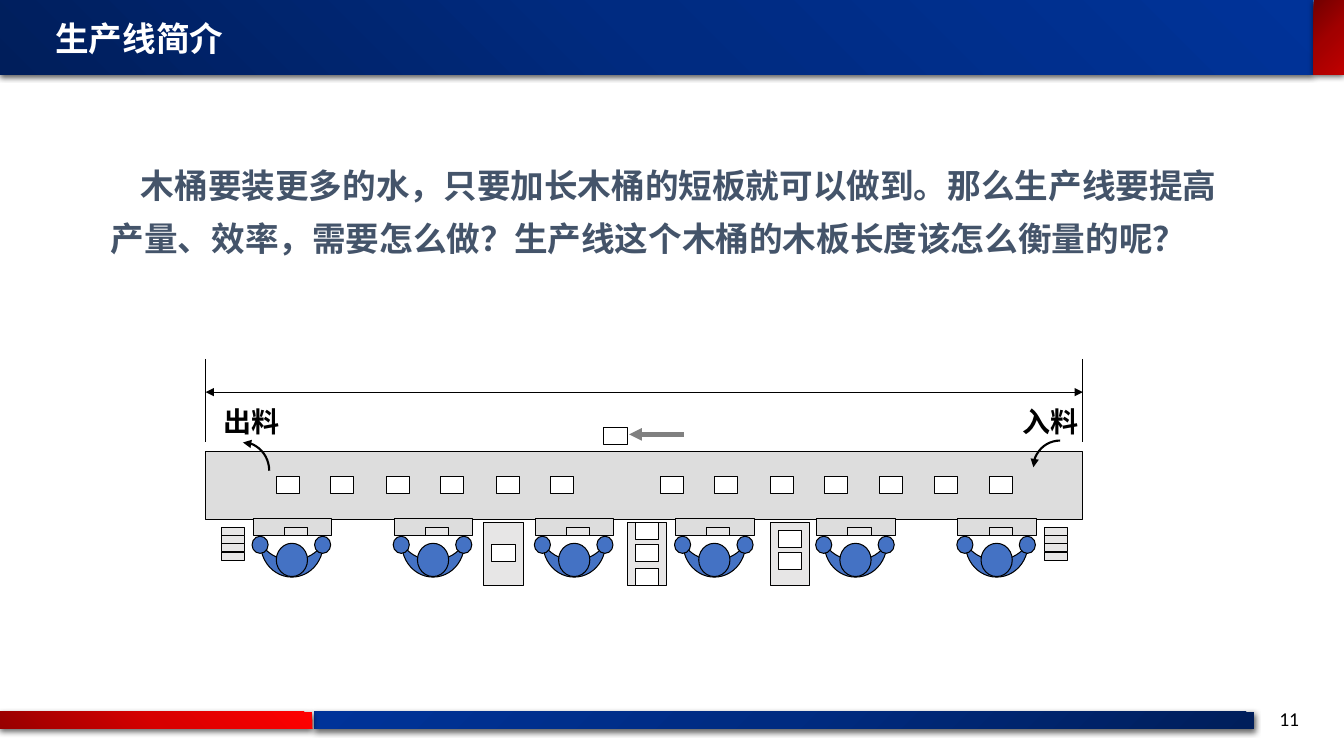
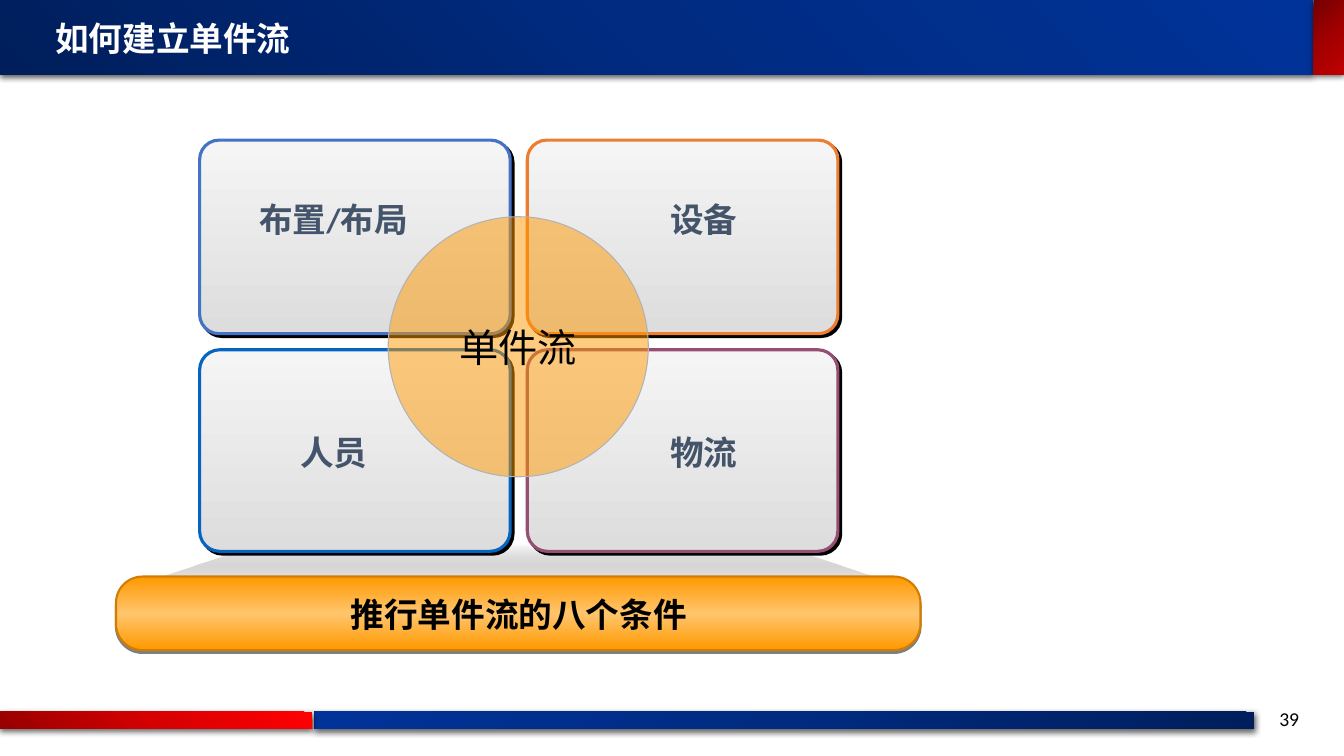
import lxml.etree
import pptx
import pptx.dml.color
import pptx.enum.shapes
import pptx.enum.text
import pptx.oxml.ns
import pptx.util

PX = 9144  # 100 px to the inch
KIND = pptx.enum.shapes.MSO_SHAPE
ALIGN = pptx.enum.text.PP_ALIGN
CJK = "Noto Sans CJK SC"
BLACK, WHITE, SLATE = "000000", "FFFFFF", "44546A"
GREY, PALE, BLUE = "DDDDDD", "E7E6E6", "4472C4"
NAVY = [(0, "001E5B"), (50, "002B81"), (100, "003399")]
RED = [(0, "970000"), (50, "D70000"), (100, "FF0000")]
WINE = [(0, "720000"), (50, "A20000"), (100, "C00000")]
SILVER = [(0, "F5F5F5"), (100, GREY)]
AMBER = [(0, "FF9900"), (50, "FFC56D"), (100, "FF9900")]
FADE = [(0, WHITE), (100, "5F5F5F", 0)]
SOFT = (BLACK, 63, 4.5, 1.5, 90)  # colour, opacity, blur, distance, angle
HARD = (BLACK, 100, 0, 2.8, 45)
UNDER = (BLACK, 50, 0, 2, 90)


def px(n):
    return pptx.util.Emu(round(n * PX))


def rgb(code):
    return pptx.dml.color.RGBColor.from_string(code)


def sub(node, tag, **keys):
    attrs = {k: str(v) for k, v in keys.items()}
    return lxml.etree.SubElement(node, pptx.oxml.ns.qn("a:" + tag), attrs)


def tint(node, code, alpha=100):
    clr = sub(node, "srgbClr", val=code)
    if alpha < 100:
        sub(clr, "alpha", val=alpha * 1000)


def blend(shape, stops, angle):
    """Gradient fill; without an angle it spreads from the lower left."""
    shape.fill.background()
    props = shape.element.spPr
    old = props.find(pptx.oxml.ns.qn("a:noFill"))
    grad = sub(props, "gradFill", rotWithShape=1)
    props.replace(old, grad)
    row = sub(grad, "gsLst")
    for pos, *color in stops:
        tint(sub(row, "gs", pos=pos * 1000), *color)
    if angle is None:
        way = sub(grad, "path", path="circle")
        sub(way, "fillToRect", t=100000, r=100000)
    else:
        sub(grad, "lin", ang=angle * 60000, scaled=0)


def style(shape, fill=None, line=None, width=0.75, angle=None, shade=None):
    if isinstance(fill, list):
        blend(shape, fill, angle)
    elif fill:
        shape.fill.solid()
        shape.fill.fore_color.rgb = rgb(fill)
    else:
        shape.fill.background()
    if line:
        shape.line.color.rgb = rgb(line)
        shape.line.width = pptx.util.Pt(width)
    else:
        shape.line.fill.background()
    shape.shadow.inherit = False
    if shade:
        color, alpha, blur, dist, turn = shade
        list_ = shape.element.spPr.find(pptx.oxml.ns.qn("a:effectLst"))
        cast = sub(list_, "outerShdw", blurRad=round(blur * 12700),
                   dist=round(dist * 12700), dir=turn * 60000, rotWithShape=0)
        tint(cast, color, alpha)
    return shape


def part(slide, kind, x, y, w, h, fill=None, line=BLACK, **look):
    shape = slide.shapes.add_shape(kind, px(x), px(y), px(w), px(h))
    return style(shape, fill, line, **look)


def tips(shape, *ends):
    ln = shape.element.spPr.find(pptx.oxml.ns.qn("a:ln"))
    for end in ends:
        sub(ln, end, type="triangle")


def rule(slide, x1, y1, x2, y2, color=BLACK, width=0.75, ends=()):
    line = slide.shapes.add_connector(
        pptx.enum.shapes.MSO_CONNECTOR.STRAIGHT, px(x1), px(y1), px(x2), px(y2))
    line.line.color.rgb = rgb(color)
    line.line.width = pptx.util.Pt(width)
    sub(line.element.spPr, "effectLst")
    tips(line, *ends)


def write(frame, text, size, color, bold=False, font="Calibri", align=None):
    frame.text = text
    para = frame.paragraphs[0]
    para.alignment = align
    run = para.runs[0]
    run.font.size = pptx.util.Pt(size)
    run.font.bold = bold
    run.font.name = font
    run.font.color.rgb = rgb(color)
    sub(run.font._element, "ea", typeface=CJK)
    return para


def label(slide, x, y, w, h, text, size, color, wrap=True, **look):
    frame = slide.shapes.add_textbox(px(x), px(y), px(w), px(h)).text_frame
    frame.word_wrap = wrap
    return write(frame, text, size, color, **look)


# Title band, footer band and page number
def base(deck, title, page):
    slide = deck.slides.add_slide(deck.slide_layouts[6])
    for x, y, w, h, fill, angle in [
            (312, 706, 932, 17, NAVY, 225), (0, 706, 310, 17, RED, None),
            (0, 0, 1303, 74, NAVY, None), (1303, 0, 30, 74, WINE, 45)]:
        part(slide, KIND.RECTANGLE, x, y, w, h, fill, None,
             angle=angle, shade=SOFT)
    label(slide, 1259, 696, 44, 34, page, 14, BLACK, wrap=False)
    label(slide, 45, 13, 591, 50, title, 24, WHITE, bold=True, font=CJK)
    return slide


# Worker with desk, seen from above
def worker(slide, x, y):
    part(slide, KIND.RECTANGLE, x, y, 78, 17, GREY)
    part(slide, KIND.RECTANGLE, x + 31, y + 9, 23, 8, PALE)
    arms = part(slide, KIND.MOON, x + 22, y + 11, 33, 62, BLUE)
    arms.rotation = 270
    part(slide, KIND.OVAL, x + 23, y + 25, 31, 33, BLUE)
    for dx in (-1, 61):
        part(slide, KIND.OVAL, x + dx, y + 18, 16, 17, BLUE)


def piece(slide, x, y):
    part(slide, KIND.RECTANGLE, x, y, 23, 17, WHITE)


# Buffer table between two workers
def buffer(slide, x, y, rows):
    part(slide, KIND.RECTANGLE, x, y, 39, 63, PALE)
    for dy in rows:
        piece(slide, x + 8, y + dy)


def stack(slide, x, y):
    for i in range(4):
        part(slide, KIND.RECTANGLE, x, y + round(8.2 * i), 23, 8, PALE)


# Curved arrow, a quarter turn with its head at the start
def bend(slide, x, y, w, h, turn):
    arc = part(slide, KIND.ARC, x, y, w, h, width=1.5)
    arc.rotation = turn
    tips(arc, "headEnd")


# Production line
def belt(slide, x, y, w):
    for edge in (x, x + w):
        rule(slide, edge, y, edge, y + 83)
    rule(slide, x, y + 33, x + w, y + 33, ends=("headEnd", "tailEnd"))
    part(slide, KIND.RECTANGLE, x, y + 92, w, 67, GREY)
    for i in range(14):
        if i != 6:
            piece(slide, x + 70 + round(54.4 * i), y + 117)
    piece(slide, x + 395, y + 68)
    rule(slide, x + 420, y + 75, x + 474, y + 75, "808080", 3, ["headEnd"])
    for i in range(6):
        worker(slide, x + 47 + round(139.8 * i), y + 158)
    for i, rows in enumerate([(22,), (0, 22, 46), (8, 30)]):
        buffer(slide, x + 276 + 142 * i, y + 162, rows)
    for dx in (16, w - 38):
        stack(slide, x + dx, y + 167)
    for dx, text in [(8, "出料"), (w - 70, "入料")]:
        label(slide, x + dx, y + 40, 76, 43, text, 20, BLACK,
              wrap=False, bold=True)
    bend(slide, x + 11, y + 83, 52, 56, 0)
    bend(slide, x + w - 49, y + 81, 53, 53, 270)


def intro(deck):
    slide = base(deck, "生产线简介", "11")
    para = label(
        slide, 100, 147, 1134, 110,
        "木桶要装更多的水，只要加长木桶的短板就可以做到。那么生产线要提高"
        "产量、效率，需要怎么做？生产线这个木桶的木板长度该怎么衡量的呢？",
        24, SLATE, bold=True)
    para.line_spacing = 1.3
    para._p.get_or_add_pPr().set("indent", str(px(30)))
    belt(slide, 204, 356, 870)


# Four tiles around a circle
def tiles(slide, x, y):
    names = [("布置/布局", BLUE), ("设备", "ED7D31"),
             ("人员", "0563C1"), ("物流", "954F72")]
    cols, rows = [(0, 8), (325, 50)], [(0, 192, 53), (208, 200, 77)]
    for i, (text, color) in enumerate(names):
        (dx, tx), (dy, h, ty) = cols[i % 2], rows[i // 2]
        tile = part(slide, KIND.ROUNDED_RECTANGLE, x + dx, y + dy, 308, h,
                    SILVER, color, width=2.25, angle=90, shade=HARD)
        tile.adjustments[0] = 0.1
        label(slide, x + dx + tx, y + dy + ty, 250, 50, text, 24, SLATE,
              bold=True, align=ALIGN.CENTER)
    disc = part(slide, KIND.OVAL, x + 187, y + 76, 258, 258,
                "FF9900", "B2B2B2")
    clr = disc.element.spPr.find(".//" + pptx.oxml.ns.qn("a:srgbClr"))
    sub(clr, "alpha", val=50000)
    frame = disc.text_frame
    frame.word_wrap = False
    frame.vertical_anchor = pptx.enum.text.MSO_ANCHOR.MIDDLE
    write(frame, "单件流", 28, BLACK, align=ALIGN.CENTER)


# Fading slope and the bar it stands on
def slope(slide, x, y):
    path = slide.shapes.build_freeform(x, y + 44, scale=PX)
    path.add_line_segments([(x + 133, y), (x + 643, y), (x + 775, y + 44)])
    style(path.convert_to_shape(), FADE, angle=90)


def bar(slide, x, y):
    shape = part(slide, KIND.ROUNDED_RECTANGLE, x, y, 798, 73, AMBER,
                 "D27D00", width=1.5, angle=90, shade=UNDER)
    shape.adjustments[0] = 0.36
    label(slide, x + 83, y + 12, 633, 50, "推行单件流的八个条件", 24, BLACK,
          bold=True, font="Arial", align=ALIGN.CENTER)


def flow(deck):
    slide = base(deck, "如何建立单件流", "39")
    slope(slide, 126, 539)
    bar(slide, 115, 572)
    tiles(slide, 198, 139)


def main():
    deck = pptx.Presentation()
    deck.slide_width, deck.slide_height = px(1333), px(750)
    intro(deck)
    flow(deck)
    deck.save("out.pptx")


if __name__ == "__main__":
    main()
